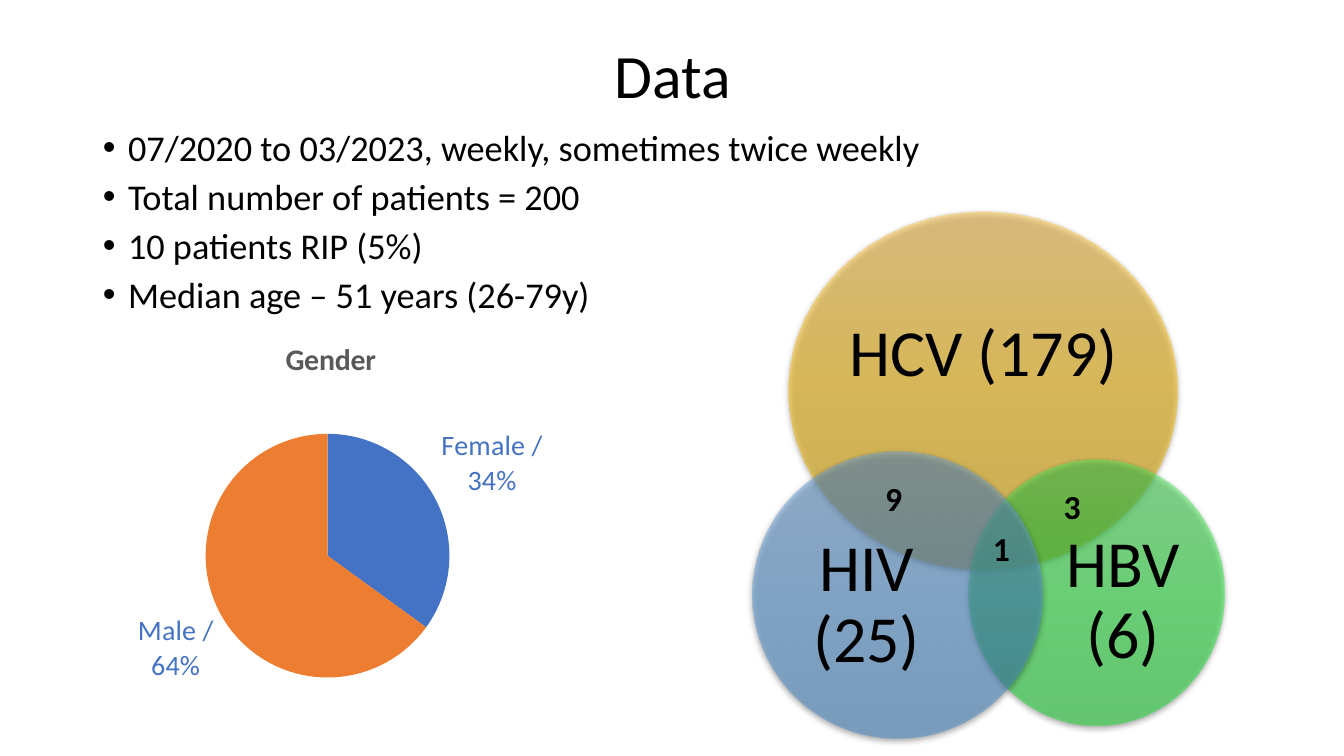
import pptx
import pptx.util
import pptx.oxml
import pptx.chart.data
from pptx.dml.color import RGBColor
from pptx.enum.chart import XL_CHART_TYPE, XL_LABEL_POSITION
from pptx.enum.shapes import MSO_SHAPE
from pptx.enum.text import MSO_ANCHOR, MSO_AUTO_SIZE, PP_ALIGN
from pptx.oxml.ns import nsdecls, qn

Inches, Pt = pptx.util.Inches, pptx.util.Pt

# Content
FONT = "Calibri"
COLORS = {"text": "000000", "chart_title": "595959", "label": "4472C4",
          "Female": "4472C4", "Male": "ED7D31"}
TITLE = "Data"
BULLETS = [
    "07/2020 to 03/2023, weekly, sometimes twice weekly",
    "Total number of patients = 200",
    "10 patients RIP (5%)",
    "Median age – 51 years (26-79y)",
]
GENDER = [("Female", 35, "Female / 34%"), ("Male", 65, "Male / 64%")]
# Venn sets: text, circle box, text box, gradient from top to bottom
VENN_SETS = [
    ("HCV (179)", (7.82, 2.1, 3.86, 3.55), (8.34, 2.72, 2.83, 1.6),
     ("FFC64B", "FFC000", "E3AB00")),
    ("HBV (6)", (9.61, 4.56, 2.53, 2.64), (10.38, 5.24, 1.52, 1.45),
     ("56EC62", "27F13E", "18E02F")),
    ("HIV (25)", (7.46, 4.48, 2.88, 2.85), (7.73, 5.22, 1.73, 1.57),
     ("71A6DB", "559BDB", "448ACA")),
]
OVERLAPS = [("9", (8.68, 4.69, 0.4, 0.5)), ("3", (10.45, 4.77, 0.4, 0.5)),
            ("1", (9.75, 5.19, 0.37, 0.5))]


def box(values):
    return [Inches(value) for value in values]


def place(shape, values):
    shape.left, shape.top, shape.width, shape.height = box(values)


def style_font(font, size, color="text", bold=False):
    font.name, font.size, font.bold = FONT, Pt(size), bold
    font.color.rgb = RGBColor.from_string(COLORS[color])


def add_run(paragraph, text, size, color="text", bold=False):
    run = paragraph.add_run()
    run.text = text
    style_font(run.font, size, color, bold)


def add_text(shapes, text, values, size, bold=False):
    text_box = shapes.add_textbox(*box(values))
    frame = text_box.text_frame
    frame.word_wrap = True
    add_run(frame.paragraphs[0], text, size, bold=bold)
    return frame


def add_circle(shapes, values, gradient):
    circle = shapes.add_shape(MSO_SHAPE.OVAL, *box(values))
    circle.fill.background()
    circle.line.fill.background()
    circle.shadow.inherit = False
    properties = circle._element.spPr
    # Half-transparent vertical gradient
    stops = "".join(
        f'<a:gs pos="{index * 50000}"><a:srgbClr val="{color}">'
        f'<a:alpha val="50000"/></a:srgbClr></a:gs>'
        for index, color in enumerate(gradient))
    fill = pptx.oxml.parse_xml(
        f'<a:gradFill {nsdecls("a")} rotWithShape="1"><a:gsLst>{stops}</a:gsLst>'
        '<a:lin ang="5400000" scaled="0"/></a:gradFill>')
    properties.replace(properties.find(qn("a:noFill")), fill)
    # Soft shadow below
    properties.find(qn("a:effectLst")).append(pptx.oxml.parse_xml(
        f'<a:outerShdw {nsdecls("a")} blurRad="{Pt(4.5)}" dist="{Pt(1.5)}" '
        'dir="5400000" algn="ctr" rotWithShape="0"><a:srgbClr val="000000">'
        '<a:alpha val="63000"/></a:srgbClr></a:outerShdw>'))


presentation = pptx.Presentation()
presentation.slide_width, presentation.slide_height = Inches(13.33), Inches(7.5)
slide = presentation.slides.add_slide(presentation.slide_layouts[1])

# Title
title = slide.shapes.title
place(title, (0.92, 0.11, 11.5, 1.33))
title.text_frame.vertical_anchor = MSO_ANCHOR.MIDDLE
paragraph = title.text_frame.paragraphs[0]
paragraph.alignment, paragraph.line_spacing = PP_ALIGN.CENTER, 0.9
add_run(paragraph, TITLE, 44)

# Bullets
body = slide.placeholders[1]
place(body, (0.92, 1.28, 11.5, 2.05))
body.text_frame.auto_size = MSO_AUTO_SIZE.NONE
for index, text in enumerate(BULLETS):
    frame = body.text_frame
    paragraph = frame.add_paragraph() if index else frame.paragraphs[0]
    paragraph.line_spacing = 0.8
    paragraph.space_before = Pt(10 if index else 0)
    indents = paragraph._p.get_or_add_pPr()
    indents.set("marL", str(Inches(0.25)))
    indents.set("indent", str(-Inches(0.25)))
    indents.append(pptx.oxml.parse_xml(
        f'<a:buFont {nsdecls("a")} typeface="Arial"/>'))
    indents.append(pptx.oxml.parse_xml(f'<a:buChar {nsdecls("a")} char="•"/>'))
    add_run(paragraph, text, 25.9)

# Venn diagram
venn = slide.shapes.add_group_shape()
for text, circle_box, text_box, gradient in VENN_SETS:
    add_circle(venn.shapes, circle_box, gradient)
    frame = add_text(venn.shapes, text, text_box, 47)
    frame.margin_left = frame.margin_right = 0
    frame.margin_top = frame.margin_bottom = 0
    frame.vertical_anchor = MSO_ANCHOR.MIDDLE
    frame.paragraphs[0].alignment = PP_ALIGN.CENTER
    frame.paragraphs[0].line_spacing = 0.9
for text, values in OVERLAPS:
    add_text(slide.shapes, text, values, 24, bold=True)

# Gender pie
data = pptx.chart.data.CategoryChartData()
data.categories = [name for name, value, label in GENDER]
data.add_series("Gender", [value for name, value, label in GENDER])
chart = slide.shapes.add_chart(
    XL_CHART_TYPE.PIE, *box((0.18, 3.17, 6.2, 4.04)), data).chart
style_font(chart.font, 10)
chart.has_legend = False
chart.has_title = True
add_run(chart.chart_title.text_frame.paragraphs[0], "Gender", 21.3,
        "chart_title", True)
plot = chart.plots[0]
plot.vary_by_categories = True
plot.has_data_labels = True
plot.data_labels.show_category_name = True
plot.data_labels.show_value = False
plot.data_labels.position = XL_LABEL_POSITION.OUTSIDE_END
style_font(plot.data_labels.font, 20, "label")
for point_index, (name, value, label) in enumerate(GENDER):
    point = plot.series[0].points[point_index]
    point.format.fill.solid()
    point.format.fill.fore_color.rgb = RGBColor.from_string(COLORS[name])
    add_run(point.data_label.text_frame.paragraphs[0], label, 20, "label")
    point.data_label.position = XL_LABEL_POSITION.OUTSIDE_END

# Fixed pie area inside the chart
layout = pptx.oxml.parse_xml(
    f'<c:layout {nsdecls("c")}><c:manualLayout><c:layoutTarget val="inner"/>'
    '<c:xMode val="edge"/><c:yMode val="edge"/><c:x val="0.3"/><c:y val="0.28"/>'
    '<c:w val="0.39"/><c:h val="0.6"/></c:manualLayout></c:layout>')
plot_area = chart._chartSpace.chart.plotArea
for old_layout in plot_area.findall(qn("c:layout")):
    plot_area.remove(old_layout)
plot_area.insert(0, layout)

presentation.save("out.pptx")
